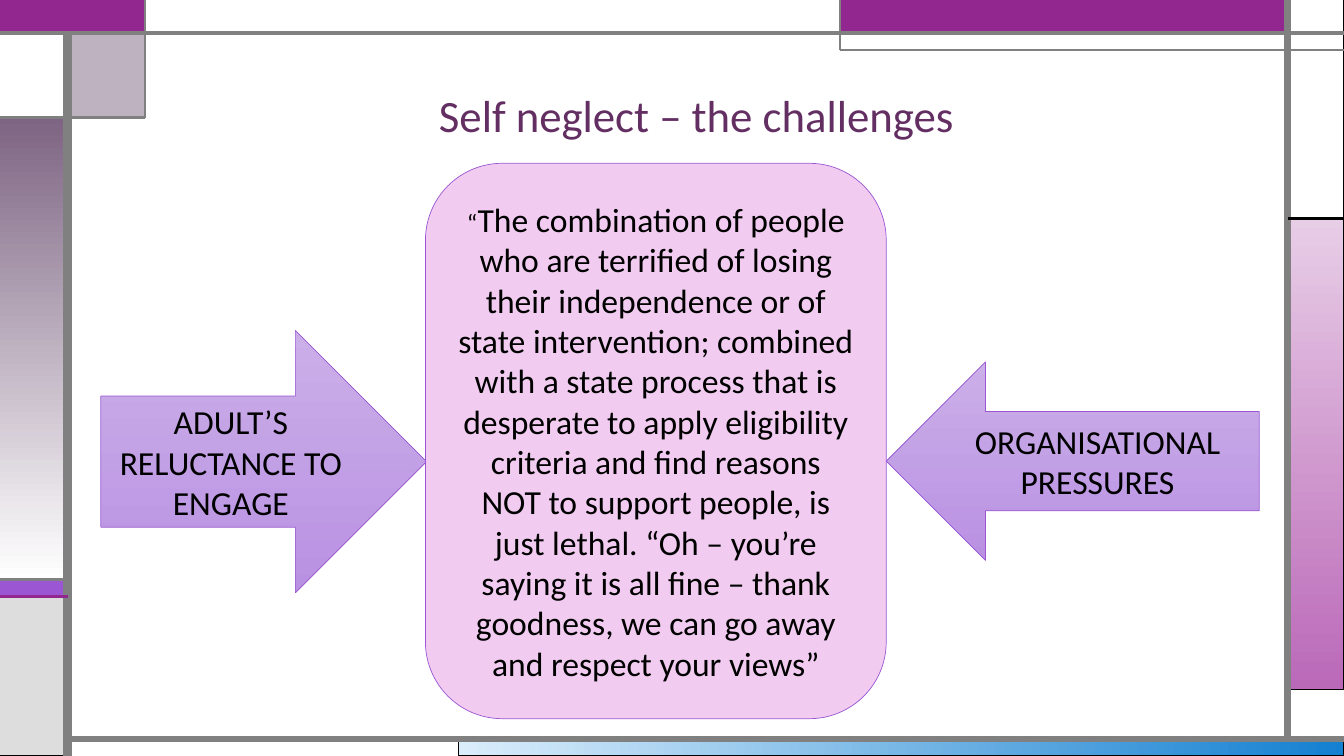
from lxml.etree import SubElement
from pptx import Presentation
from pptx.dml.color import RGBColor
from pptx.enum.shapes import MSO_CONNECTOR, MSO_SHAPE as Preset
from pptx.enum.text import MSO_ANCHOR as Anchor, PP_ALIGN as Align
from pptx.oxml.ns import qn
from pptx.util import Inches, Pt

WIDTH, HEIGHT = 13.33, 7.5
LEFT, RIGHT, TOP, BOTTOM = 0.67, 12.77, 0.33, 7.33
TAB_X, TAB_Y = 1.44, 1.17
BANNER_X, BANNER_Y = 8.33, 0.5
PANEL_Y, PANEL_END = 2.17, 6.84
STRIP_Y, STRIP_END = 5.75, 5.92
GRAY, BLACK, WHITE, PURPLE, VIOLET = "808080", "000000", "FFFFFF", "92278F", "9B57D3"
ARROW_FILL = ("CBAFE8", "B991E3", 270)

FRAME_BLOCKS = [
    (4.55, BOTTOM, WIDTH, HEIGHT, ("DAEDFB", "1480D1", 0), BLACK, 0.75),
    (RIGHT, PANEL_Y, WIDTH, PANEL_END, ("E8CDE7", "BA69B8", 270), BLACK, 0.75),
    (0, STRIP_Y, LEFT, STRIP_END, VIOLET, BLACK, 0.75),
    (0, STRIP_END, LEFT, HEIGHT, "DDDDDD", BLACK, 0.75),
    (RIGHT, 0, WIDTH, PANEL_Y, WHITE, BLACK, 0.75),
    (BANNER_X, 0, RIGHT, TOP, PURPLE, "755DD9", 0.75),
    (LEFT, TOP, TAB_X, TAB_Y, "7E6583", BLACK, 0.75),
    (0, TAB_Y, LEFT, STRIP_Y, ("7E6583", WHITE, 270), BLACK, 0.75),
    (0, TOP, LEFT, TAB_Y, WHITE, BLACK, 0.75),
    (0, 0, TAB_X, TOP, PURPLE, PURPLE, 1.5),
    (TAB_X, 0, BANNER_X, TOP, WHITE, GRAY, 0.75),
]
TRANSLUCENT_BLOCK = 6

FRAME_LINES = [
    (LEFT, HEIGHT, LEFT, TOP, GRAY, 6),
    (LEFT, BOTTOM, WIDTH, BOTTOM, GRAY, 4.5),
    (RIGHT, BOTTOM, RIGHT, 0, GRAY, 4.5),
    (0, TOP, WIDTH, TOP, GRAY, 3),
    (WIDTH, BANNER_Y, BANNER_X, BANNER_Y, GRAY, 1.5),
    (BANNER_X, BANNER_Y, BANNER_X, 0, GRAY, 1.5),
    (RIGHT, PANEL_Y, WIDTH, PANEL_Y, BLACK, 2.25),
    (TAB_X, 0, TAB_X, TAB_Y, GRAY, 1.5),
    (TAB_X, TAB_Y, 0, TAB_Y, GRAY, 2.25),
    (LEFT, STRIP_Y, 0, STRIP_Y, GRAY, 2.25),
    (LEFT, STRIP_END, 0, STRIP_END, PURPLE, 2.25),
]

QUOTE = (
    "The combination of people who are terrified of losing their independence or of "
    "state intervention; combined with a state process that is desperate to apply "
    "eligibility criteria and find reasons NOT to support people, is just lethal. "
    "“Oh – you’re saying it is all fine – thank goodness, we can go away and respect "
    "your views”"
)
CONTENT = [
    (Preset.RIGHT_ARROW, (1, 3.28, 3.23, 2.6), ARROW_FILL,
     [("ADULT’S RELUCTANCE TO ENGAGE", 24)]),
    (Preset.FLOWCHART_ALTERNATE_PROCESS, (4.22, 1.62, 4.57, 5.51), "F1CCF0",
     [("“", 18), (QUOTE, 24)]),
    (Preset.LEFT_ARROW, (8.79, 3.59, 3.7, 1.97), ARROW_FILL,
     [("ORGANISATIONAL PRESSURES", 24)]),
]


def color(hex_value):
    """Return the colour for a hex string."""
    return RGBColor.from_string(hex_value)


def set_attributes(target, values):
    """Set each named attribute on the target."""
    for name, value in values.items():
        setattr(target, name, value)


def paint(shape, fill, line_color, line_width):
    """Give a shape a solid or (start, end, angle) gradient fill and an outline."""
    shape.shadow.inherit = False
    if isinstance(fill, str):
        shape.fill.solid()
        shape.fill.fore_color.rgb = color(fill)
    else:
        *stop_colors, angle = fill
        shape.fill.gradient()
        shape.fill.gradient_angle = angle
        for stop, stop_color in zip(shape.fill.gradient_stops, stop_colors):
            stop.color.rgb = color(stop_color)
    shape.line.color.rgb = color(line_color)
    shape.line.width = Pt(line_width)


def write_text(shape, runs, text_color, spacing=1.0, anchor=Anchor.MIDDLE):
    """Write one centred paragraph made of (text, size) runs."""
    set_attributes(shape.text_frame, {"word_wrap": True, "vertical_anchor": anchor})
    paragraph = shape.text_frame.paragraphs[0]
    set_attributes(paragraph, {"alignment": Align.CENTER, "line_spacing": spacing})
    for text, size in runs:
        run = paragraph.add_run()
        run.text = text
        set_attributes(run.font, {"name": "Calibri", "size": Pt(size)})
        run.font.color.rgb = color(text_color)


def add_block(slide, left, top, right, bottom, fill, line_color, line_width):
    """Add one rectangle of the frame, given by its edges."""
    box = map(Inches, (left, top, right - left, bottom - top))
    block = slide.shapes.add_shape(Preset.RECTANGLE, *box)
    paint(block, fill, line_color, line_width)
    return block


def set_opacity(shape, percent):
    """Make a solid fill partly transparent."""
    fill_color = shape.fill._xPr.find(qn("a:solidFill"))[0]
    SubElement(fill_color, qn("a:alpha"), val=str(percent * 1000))


def add_line(slide, start_x, start_y, end_x, end_y, line_color, line_width):
    """Add one straight line of the frame."""
    ends = map(Inches, (start_x, start_y, end_x, end_y))
    connector = slide.shapes.add_connector(MSO_CONNECTOR.STRAIGHT, *ends)
    connector.line.color.rgb = color(line_color)
    connector.line.width = Pt(line_width)
    SubElement(connector._element.spPr, qn("a:effectLst"))


def add_label(slide, preset, box, fill, runs):
    """Add one filled shape with its text."""
    shape = slide.shapes.add_shape(preset, *map(Inches, box))
    paint(shape, fill, VIOLET, 0.5)
    write_text(shape, runs, BLACK)


def add_title(slide, text):
    """Place and format the title placeholder."""
    title = slide.shapes.title
    names = ("left", "top", "width", "height")
    set_attributes(title, dict(zip(names, map(Inches, (1.66, 0.58, 10.5, 0.88)))))
    write_text(title, [(text, 32)], "632E62", spacing=0.9, anchor=Anchor.BOTTOM)


def main():
    """Build the slide and save it."""
    presentation = Presentation()
    set_attributes(presentation, {"slide_width": Inches(WIDTH), "slide_height": Inches(HEIGHT)})
    slide = presentation.slides.add_slide(presentation.slide_layouts[5])
    blocks = [add_block(slide, *block) for block in FRAME_BLOCKS]
    set_opacity(blocks[TRANSLUCENT_BLOCK], 50)
    for line in FRAME_LINES:
        add_line(slide, *line)
    add_title(slide, "Self neglect – the challenges")
    for label in CONTENT:
        add_label(slide, *label)
    presentation.save("out.pptx")


if __name__ == "__main__":
    main()
